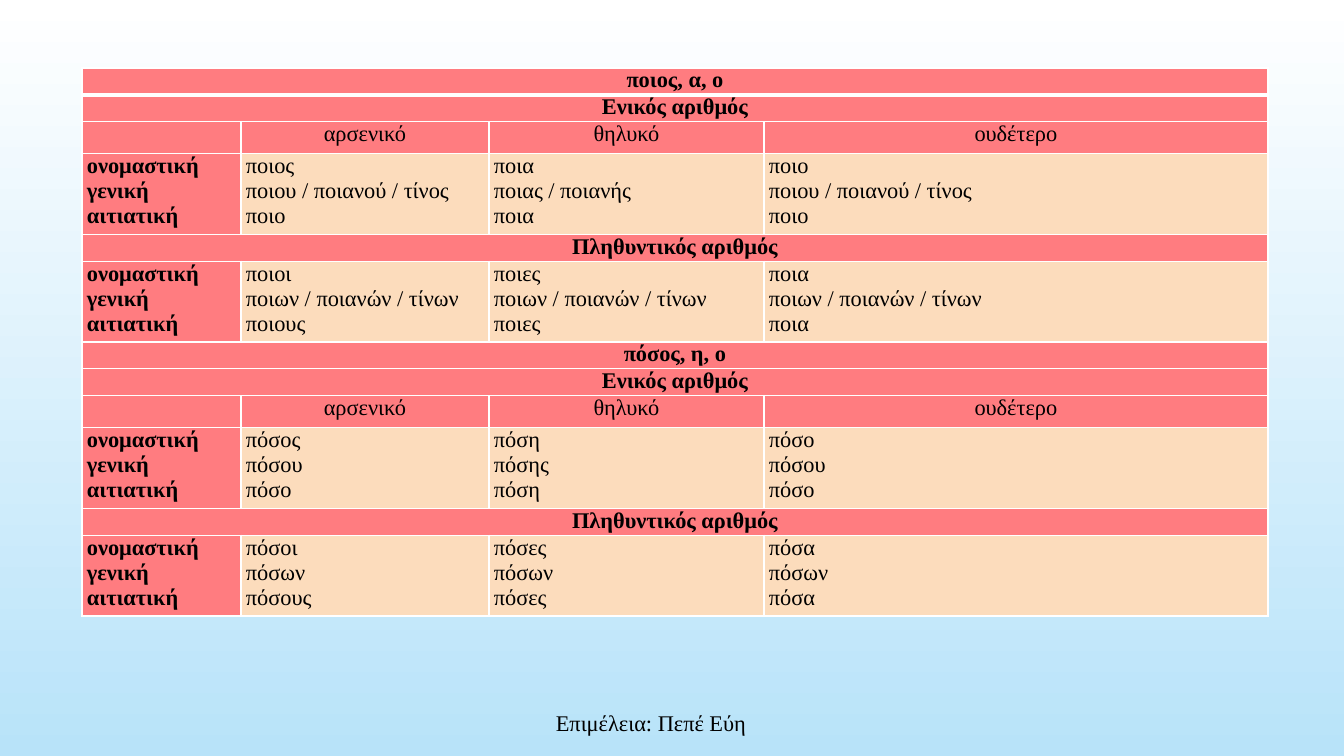
from dataclasses import dataclass

from lxml import etree
from pptx import Presentation
from pptx.dml.color import RGBColor
from pptx.enum.text import MSO_ANCHOR, PP_ALIGN
from pptx.oxml.ns import qn
from pptx.util import Emu, Pt

CENTER, LEFT = PP_ALIGN.CENTER, PP_ALIGN.LEFT
MIDDLE = MSO_ANCHOR.MIDDLE
EMU_PER_PX = 914400 / 100.8


def px(n):
    return Emu(round(n * EMU_PER_PX))


@dataclass(frozen=True)
class Theme:
    font: str = "Times New Roman"
    size: int = 16
    text: str = "000000"
    sky_top: str = "FFFFFF"
    sky_bottom: str = "B8E3F9"
    heading: str = "FF7C80"
    body: str = "FCDCBC"
    border: str = "FFFFFF"
    thin: int = 1
    thick: int = 3


class Deck:
    def __init__(self, theme):
        self.theme = theme
        self.prs = Presentation()
        self.prs.slide_width, self.prs.slide_height = px(1344), px(756)

    def add_slide(self):
        self.s = self.prs.slides.add_slide(self.prs.slide_layouts[6])
        fill = self.s.background.fill
        fill.gradient()
        fill.gradient_angle = 270
        for stop, color in zip(fill.gradient_stops,
                               (self.theme.sky_top, self.theme.sky_bottom)):
            stop.color.rgb = RGBColor.from_string(color)

    def add_lines(self, tf, text, align=LEFT, bold=False):
        """Fill the frame with one paragraph, a line break between lines."""
        p = tf.paragraphs[0]
        p.alignment = align
        for i, line in enumerate(text.split("\n")):
            if i:
                p.add_line_break()
            r = p.add_run()
            r.text = line
            r.font.name, r.font.size = self.theme.font, Pt(self.theme.size)
            r.font.bold = bold
            r.font.color.rgb = RGBColor.from_string(self.theme.text)

    def text(self, x, y, w, h, text):
        tf = self.s.shapes.add_textbox(px(x), px(y), px(w), px(h)).text_frame
        tf.word_wrap = True
        tf.vertical_anchor = MIDDLE
        self.add_lines(tf, text, CENTER)

    def table(self, x, y, cols, rows):
        frame = self.s.shapes.add_table(len(rows), len(cols), px(x), px(y),
                                        px(sum(cols)), px(sum(h for h, _ in rows)))
        table = frame.table
        table.first_row = table.horz_banding = False
        for column, width in zip(table.columns, cols):
            column.width = px(width)
        for i, (height, texts) in enumerate(rows):
            table.rows[i].height = px(height)
            banner = len(texts) == 1
            for j in range(len(cols)):
                self.cell(table.cell(i, j), i, banner or j == 0 or not texts[0])
            if banner:
                table.cell(i, 0).merge(table.cell(i, len(cols) - 1))
            for j, text in enumerate(texts):
                if text:
                    align = CENTER if banner or not texts[0] else LEFT
                    self.add_lines(table.cell(i, j).text_frame, text, align, j == 0)

    def cell(self, cell, row, heading):
        t = self.theme
        cell.margin_left = cell.margin_right = px(5)
        cell.margin_top = cell.margin_bottom = 0
        cell.fill.solid()
        cell.fill.fore_color.rgb = RGBColor.from_string(t.heading if heading else t.body)
        thick_side = {0: "lnB", 1: "lnT"}.get(row)
        tc_pr = cell._tc.get_or_add_tcPr()
        for k, side in enumerate(("lnL", "lnR", "lnT", "lnB")):
            ln = etree.Element(qn("a:" + side))
            ln.set("w", str(Pt(t.thick if side == thick_side else t.thin)))
            solid = etree.SubElement(ln, qn("a:solidFill"))
            etree.SubElement(solid, qn("a:srgbClr")).set("val", t.border)
            tc_pr.insert(k, ln)


BANNER_H, GENDER_H, FORMS_H = 24, 32, 74
CASES = "ονομαστική\nγενική\nαιτιατική"
GENDERS = ["", "αρσενικό", "θηλυκό", "ουδέτερο"]
PRONOUNS = [
    ("ποιος, α, ο",
     ["ποιος\nποιου / ποιανού / τίνος\nποιο",
      "ποια\nποιας / ποιανής\nποια",
      "ποιο\nποιου / ποιανού / τίνος\nποιο"],
     ["ποιοι\nποιων / ποιανών / τίνων\nποιους",
      "ποιες\nποιων / ποιανών / τίνων\nποιες",
      "ποια\nποιων / ποιανών / τίνων\nποια"]),
    ("πόσος, η, ο",
     ["πόσος\nπόσου\nπόσο", "πόση\nπόσης\nπόση", "πόσο\nπόσου\nπόσο"],
     ["πόσοι\nπόσων\nπόσους", "πόσες\nπόσων\nπόσες", "πόσα\nπόσων\nπόσα"]),
]


def declension_rows(title, singular, plural):
    return [
        (BANNER_H, [title]),
        (BANNER_H, ["Ενικός αριθμός"]),
        (GENDER_H, GENDERS),
        (FORMS_H, [CASES, *singular]),
        (BANNER_H, ["Πληθυντικός αριθμός"]),
        (FORMS_H, [CASES, *plural]),
    ]


def main():
    deck = Deck(Theme())
    deck.add_slide()
    deck.text(283, 703, 736, 40, "Επιμέλεια: Πεπέ Εύη")
    rows = [row for pronoun in PRONOUNS for row in declension_rows(*pronoun)]
    deck.table(82, 68, [159, 248, 275, 504], rows)
    deck.prs.save("out.pptx")


if __name__ == "__main__":
    main()
